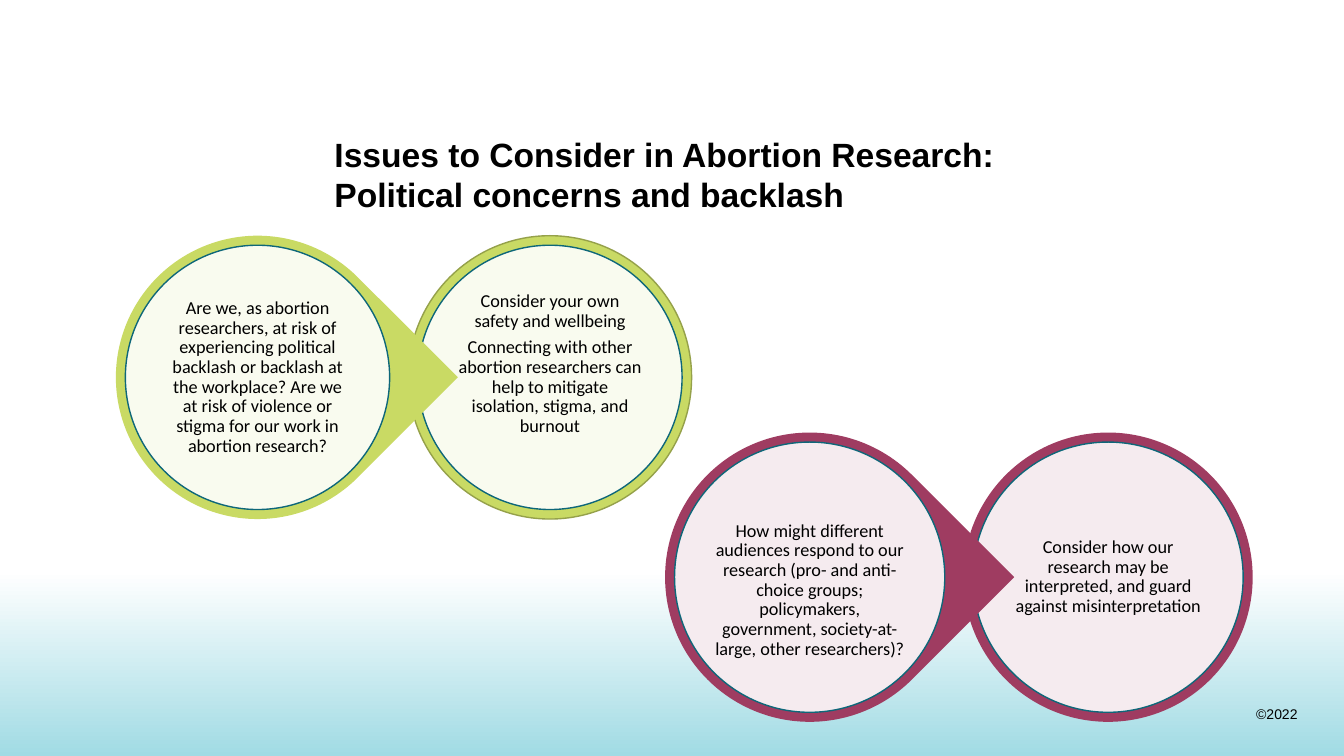
from lxml.etree import SubElement
from pptx import Presentation
from pptx.dml.color import RGBColor
from pptx.enum.shapes import MSO_SHAPE as Preset
from pptx.enum.text import MSO_ANCHOR as Anchor, PP_ALIGN as Align
from pptx.oxml.ns import qn
from pptx.util import Cm, Pt

COLORS = {"white": "FFFFFF", "black": "000000", "aqua": "A1DBE4", "teal": "0E6779",
          "lime": "C9DA64", "olive": "95A14A", "plum": "9F3C61"}
RIM = 0.24


def color(key):
    """Return the palette colour called key."""
    return RGBColor.from_string(COLORS[key])


def add_preset(slide, preset, box, fill=None, line=None):
    """Add a flat preset shape in box, given in cm."""
    shape = slide.shapes.add_shape(preset, *map(Cm, box))
    shape.shadow.inherit = False
    if fill:
        shape.fill.solid()
        shape.fill.fore_color.rgb = color(fill)
    if line:
        shape.line.color.rgb = color(line)
        shape.line.width = Pt(1)
    else:
        shape.line.fill.background()
    return shape


def add_text(slide, box, paragraphs, size, font="Arial", bold=False, align=Align.LEFT, wrap=True):
    """Add a text box in box, given in cm, and return its frame."""
    frame = slide.shapes.add_textbox(*map(Cm, box)).text_frame
    frame.word_wrap = wrap
    for index, words in enumerate(paragraphs):
        paragraph = frame.paragraphs[0] if index == 0 else frame.add_paragraph()
        paragraph.text = words
        paragraph.alignment = align
        paragraph.font.name = font
        paragraph.font.size = Pt(size)
        paragraph.font.bold = bold
        paragraph.font.color.rgb = color("black")
    return frame


def add_backdrop(slide, box):
    """Fade the foot of the slide from white to aqua and set the copyright line on it."""
    left, top, width, height = box
    fade = add_preset(slide, Preset.RECTANGLE, box)
    fade.fill.gradient()
    fade.fill.gradient_angle = 270
    for stop, position, key in zip(fade.fill.gradient_stops, (0, 1), ("white", "aqua")):
        stop.position = position
        stop.color.rgb = color(key)
    add_text(slide, (left + width - 2.47, top + 3.25, 1.55, 0.69), ["©2022"], 10,
             align=Align.RIGHT, wrap=False)


def add_bubble(slide, box, preset, ring, outline, paragraphs, shift):
    """Draw a coloured ring, its pale disc and the text, moved down by shift."""
    left, top, size, _ = box
    rim = add_preset(slide, preset, box, ring, outline)
    if preset == Preset.TEAR:
        rim.rotation = 45

    inner = size - 2 * RIM
    disc = add_preset(slide, Preset.OVAL, (left + RIM, top + RIM, inner, inner), "white", "teal")
    white = disc.fill._xPr.find(qn("a:solidFill"))[0]
    SubElement(white, qn("a:alpha"), val="90000")

    side, margin = size * 2 / 3, size / 6
    frame = add_text(slide, (left + margin, top + margin + shift, side, side),
                     paragraphs, 13, "Calibri", align=Align.CENTER)
    frame.vertical_anchor = Anchor.MIDDLE
    frame.margin_left = frame.margin_right = frame.margin_top = frame.margin_bottom = Cm(0.05)
    for paragraph in frame.paragraphs:
        paragraph.line_spacing = 0.9
        paragraph.space_after = Pt(4.5)


def add_pair(slide, box, ring, outline, concern, advice, concern_shift=0, advice_shift=0):
    """Draw a concern whose teardrop points at the advice beside it."""
    left, top, width, size = box
    add_bubble(slide, (left + width - size, top, size, size), Preset.OVAL,
               ring, outline, advice, advice_shift)
    add_bubble(slide, (left, top, size, size), Preset.TEAR, ring, None, concern, concern_shift)


def main():
    """Build the slide and save it."""
    deck = Presentation()
    deck.slide_width, deck.slide_height = Cm(33.87), Cm(19.05)
    slide = deck.slides.add_slide(deck.slide_layouts[6])
    add_backdrop(slide, (0, 14.4, 33.87, 4.65))
    add_text(slide, (8.18, 3.25, 21.11, 1.83),
             ["Issues to Consider in Abortion Research:\vPolitical concerns and backlash"],
             24, bold=True)
    add_pair(slide, (2.92, 5.94, 14.51, 7.14), "lime", "olive",
             ["Are we, as abortion researchers, at risk of experiencing political backlash or "
              "backlash at the workplace? Are we at risk of violence or stigma for our work in "
              "abortion research?"],
             ["Consider your own safety and wellbeing",
              "Connecting with other abortion researchers can help to mitigate isolation, "
              "stigma, and burnout"],
             advice_shift=-0.33)
    add_pair(slide, (16.76, 10.9, 14.81, 7.29), "plum", None,
             ["How might different audiences respond to our research (pro- and anti-choice "
              "groups; policymakers, government, society-at-large, other researchers)?"],
             ["Consider how our research may be interpreted, and guard against "
              "misinterpretation"],
             concern_shift=0.33)
    deck.save("out.pptx")


if __name__ == "__main__":
    main()
